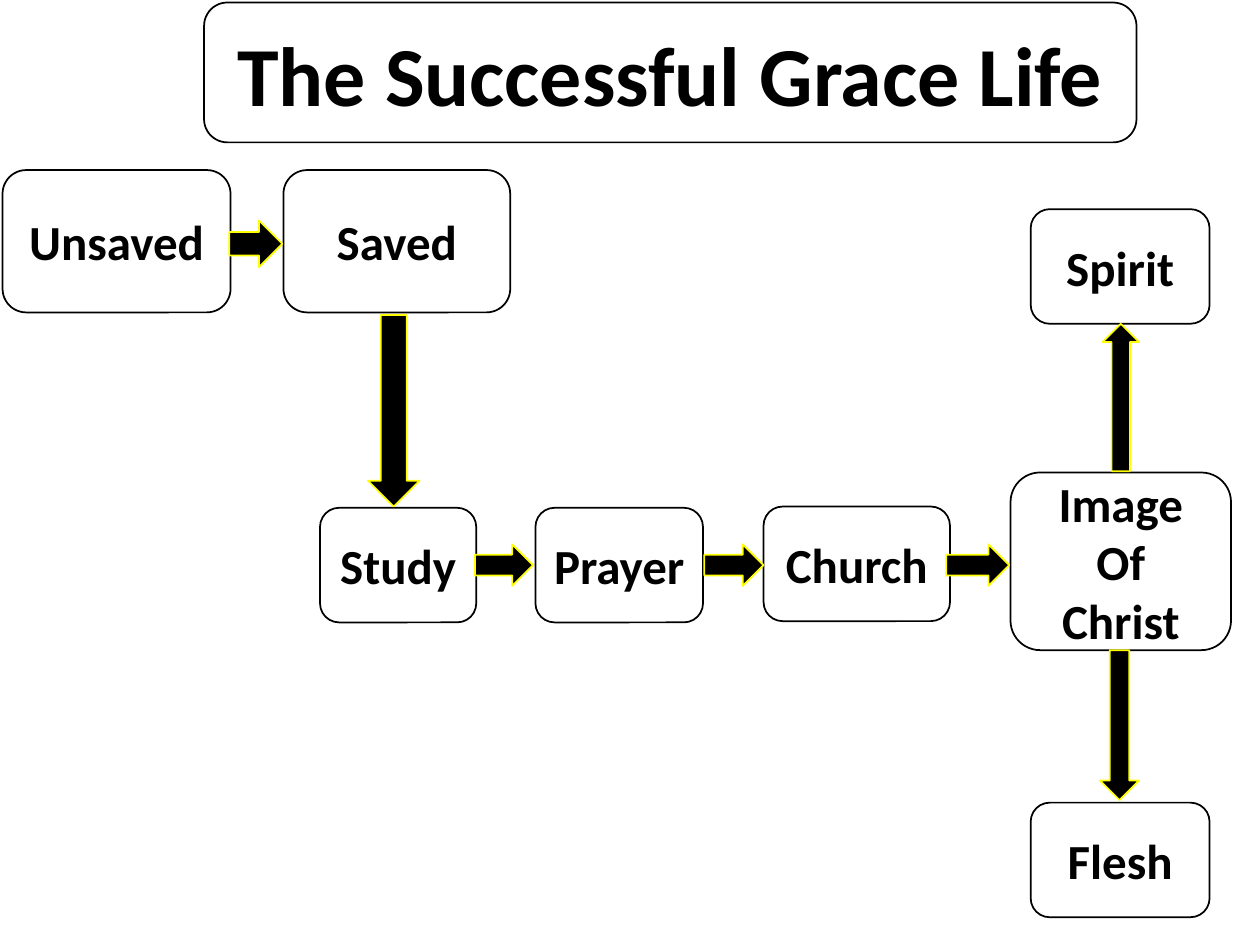
from pptx import Presentation
from pptx.dml.color import RGBColor
from pptx.enum.shapes import MSO_SHAPE
from pptx.enum.text import MSO_ANCHOR, PP_ALIGN
from pptx.util import Inches, Pt

BLACK = RGBColor(0x00, 0x00, 0x00)
YELLOW = RGBColor(0xFF, 0xFF, 0x00)
FONT = "Calibri"
ROUNDED = MSO_SHAPE.ROUNDED_RECTANGLE
RIGHT = MSO_SHAPE.RIGHT_ARROW
UP = MSO_SHAPE.UP_ARROW
DOWN = MSO_SHAPE.DOWN_ARROW
MIDDLE = MSO_ANCHOR.MIDDLE
CENTER = PP_ALIGN.CENTER

STEP_HEIGHT = 0.91
ARROW_TOP, ARROW_HEIGHT = 4.32, 0.33

# Stages of the life: lines of text, left, top, width, height
STAGES = [
    (["Unsaved"], 0.02, 1.35, 1.81, 1.13),
    (["Saved"], 2.25, 1.35, 1.8, 1.13),
    (["Study"], 2.54, 4.03, 1.24, STEP_HEIGHT),
    (["Prayer"], 4.25, 4.03, 1.33, STEP_HEIGHT),
    (["Church"], 6.06, 4.02, 1.48, STEP_HEIGHT),
    (["Image", "Of", "Christ"], 8.02, 3.75, 1.75, 1.41),
    (["Spirit"], 8.18, 1.66, 1.42, STEP_HEIGHT),
    (["Flesh"], 8.18, 6.37, 1.42, STEP_HEIGHT),
]

# Arrows between stages: kind, left, top, width, height
ARROWS = [
    (RIGHT, 1.82, 1.75, 0.42, 0.37),                  # Unsaved to Saved
    (DOWN, 2.92, 2.5, 0.41, 1.52),                    # Saved to Study
    (RIGHT, 3.77, ARROW_TOP, 0.46, ARROW_HEIGHT),     # Study to Prayer
    (RIGHT, 5.59, ARROW_TOP, 0.47, ARROW_HEIGHT),     # Prayer to Church
    (RIGHT, 7.51, ARROW_TOP, 0.5, ARROW_HEIGHT),      # Church to Image
    (UP, 8.75, 2.57, 0.29, 1.17),                     # Image to Spirit
    (DOWN, 8.73, 5.16, 0.31, 1.19),                   # Image to Flesh
]


def add_outlined(slide, kind, bounds, line_color):
    shape = slide.shapes.add_shape(kind, *(Inches(value) for value in bounds))
    shape.shadow.inherit = False
    shape.line.color.rgb = line_color
    shape.line.width = Pt(1)
    return shape


def add_box(slide, lines, bounds, size=28):
    box = add_outlined(slide, ROUNDED, bounds, BLACK)
    box.fill.background()
    frame = box.text_frame
    frame.word_wrap = True
    frame.vertical_anchor = MIDDLE
    frame.margin_left = frame.margin_right = Inches(0.05)
    frame.text = "\n".join(lines)
    for para in frame.paragraphs:
        para.alignment = CENTER
        para.font.name = FONT
        para.font.size = Pt(size)
        para.font.bold = True
        para.font.color.rgb = BLACK


def add_arrow(slide, kind, bounds):
    arrow = add_outlined(slide, kind, bounds, YELLOW)
    arrow.fill.solid()
    arrow.fill.fore_color.rgb = BLACK


def main():
    deck = Presentation()
    deck.slide_width, deck.slide_height = Inches(10), Inches(7.5)
    slide = deck.slides.add_slide(deck.slide_layouts[6])

    # Title
    add_box(slide, ["The Successful Grace Life"], (1.62, 0.02, 7.4, 1.11), size=48)

    # Flow chart
    for lines, *bounds in STAGES:
        add_box(slide, lines, bounds)
    for kind, *bounds in ARROWS:
        add_arrow(slide, kind, bounds)

    deck.save("out.pptx")


if __name__ == "__main__":
    main()
